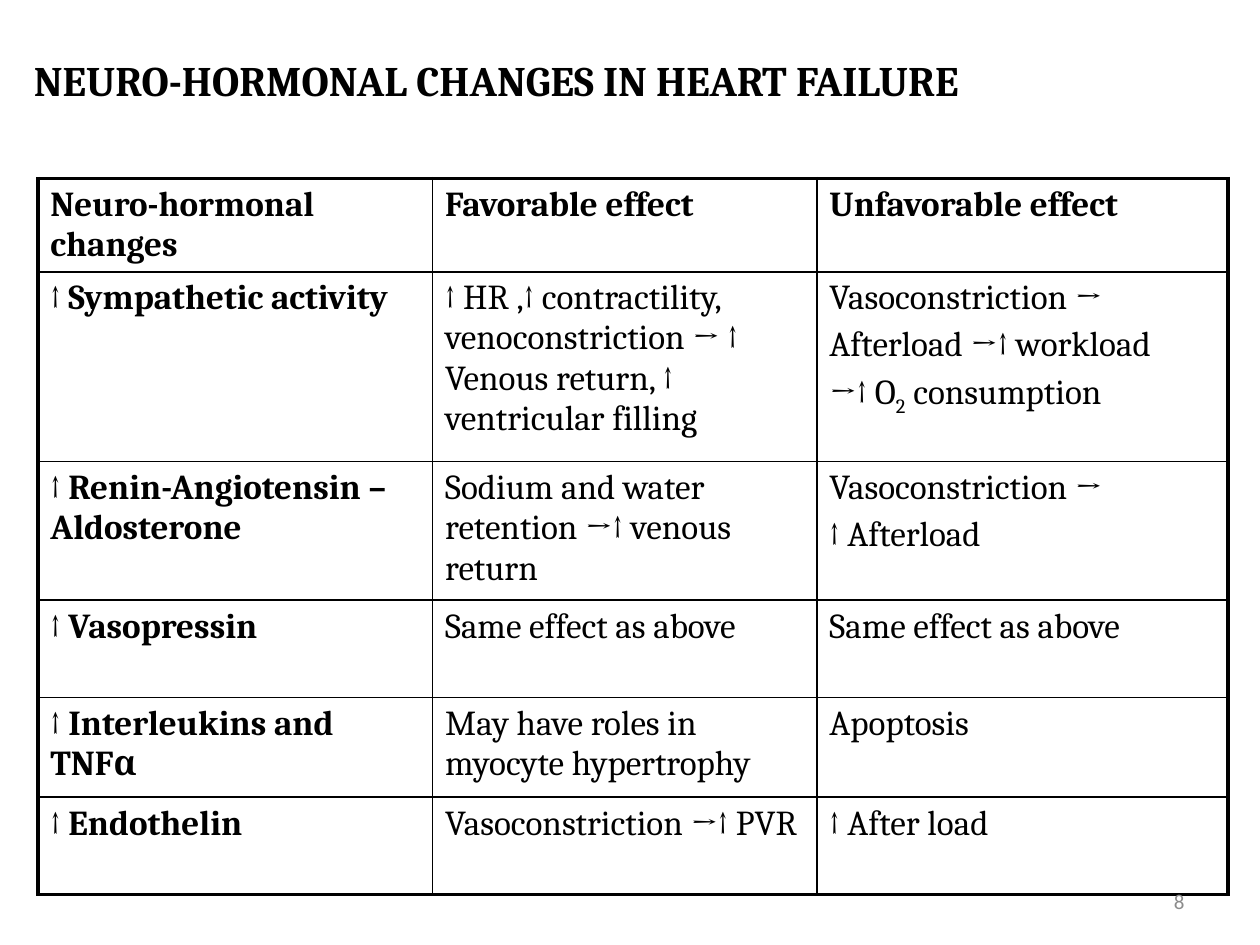
from lxml.etree import SubElement
from pptx import Presentation
from pptx.dml.color import RGBColor
from pptx.enum.text import MSO_ANCHOR, MSO_AUTO_SIZE, PP_ALIGN
from pptx.oxml.ns import qn
from pptx.util import Pt


def style(font, size, name="Cambria", bold=False, color="000000"):
    font.size, font.name, font.bold = Pt(size), name, bold
    font.color.rgb = RGBColor.from_string(color)


def border(cell, side, width, color="000000"):
    line = SubElement(cell._tc.get_or_add_tcPr(), qn("a:ln" + side), w=str(Pt(width)))
    fill = SubElement(line, qn("a:solidFill"))
    SubElement(fill, qn("a:srgbClr"), val=color)


deck = Presentation()
deck.slide_width, deck.slide_height = Pt(720), Pt(540)
slide = deck.slides.add_slide(deck.slide_layouts[5])

# Title
title = slide.shapes.title
title.left, title.top, title.width, title.height = Pt(12.2), Pt(9.4), Pt(690), Pt(72.7)
frame = title.text_frame
frame.text = "NEURO-HORMONAL CHANGES IN HEART FAILURE"
frame.auto_size = MSO_AUTO_SIZE.NONE
frame.vertical_anchor = MSO_ANCHOR.MIDDLE
frame.paragraphs[0].alignment = PP_ALIGN.LEFT
style(frame.paragraphs[0].runs[0].font, 24, bold=True)

# Table of changes and their effects
rows = [
    ("Neuro-hormonal changes", "Favorable effect", "Unfavorable effect"),
    ("↑ Sympathetic activity",
     "↑ HR ,↑ contractility, venoconstriction → ↑ Venous return, ↑ ventricular filling",
     "Vasoconstriction →\nAfterload →↑ workload\n→↑ O_2_ consumption"),
    ("↑ Renin-Angiotensin – Aldosterone",
     "Sodium and water retention →↑ venous return",
     "Vasoconstriction →\n↑ Afterload"),
    ("↑ Vasopressin", "Same effect as above", "Same effect as above"),
    ("↑ Interleukins and TNFα", "May have roles in myocyte hypertrophy", "Apoptosis"),
    ("↑ Endothelin", "Vasoconstriction →↑ PVR", "↑ After load"),
]
widths = [225.6, 219.6, 235]
heights = [52.8, 108.5, 79.2, 55.6, 57, 55.6]
table = slide.shapes.add_table(len(rows), len(widths), Pt(21.6), Pt(102),
                               Pt(sum(widths)), Pt(sum(heights))).table
table.first_row = table.horz_banding = False
for col, width in zip(table.columns, widths):
    col.width = Pt(width)
for row, height in zip(table.rows, heights):
    row.height = Pt(height)

for r, row in enumerate(rows):
    for c, text in enumerate(row):
        cell = table.cell(r, c)
        cell.text_frame.text = text.replace("_", "")
        for para, line in zip(cell.text_frame.paragraphs, text.split("\n")):
            para.space_before = Pt(4)
            # Underscores enclose a subscript
            parts = line.split("_")
            para.runs[0].text = parts[0]
            for part in parts[1:]:
                para.add_run().text = part
            for i, run in enumerate(para.runs):
                style(run.font, 20, bold=r == 0 or c == 0)
                if i % 2:
                    run._r.get_or_add_rPr().set("baseline", "-25000")
        # Thick outer frame, thin inner grid
        edges = {"L": c == 0, "R": c == len(widths) - 1,
                 "T": r == 0, "B": r == len(rows) - 1}
        for side, outer in edges.items():
            border(cell, side, 2.25 if outer else 1)
        cell.fill.background()

# Slide number
box = slide.shapes.add_textbox(Pt(516), Pt(500.5), Pt(168), Pt(28.8))
frame = box.text_frame
frame.word_wrap = True
frame.vertical_anchor = MSO_ANCHOR.MIDDLE
frame.text = "8"
frame.paragraphs[0].alignment = PP_ALIGN.RIGHT
style(frame.paragraphs[0].runs[0].font, 12, "Calibri", color="8C8C8C")

deck.save("out.pptx")
